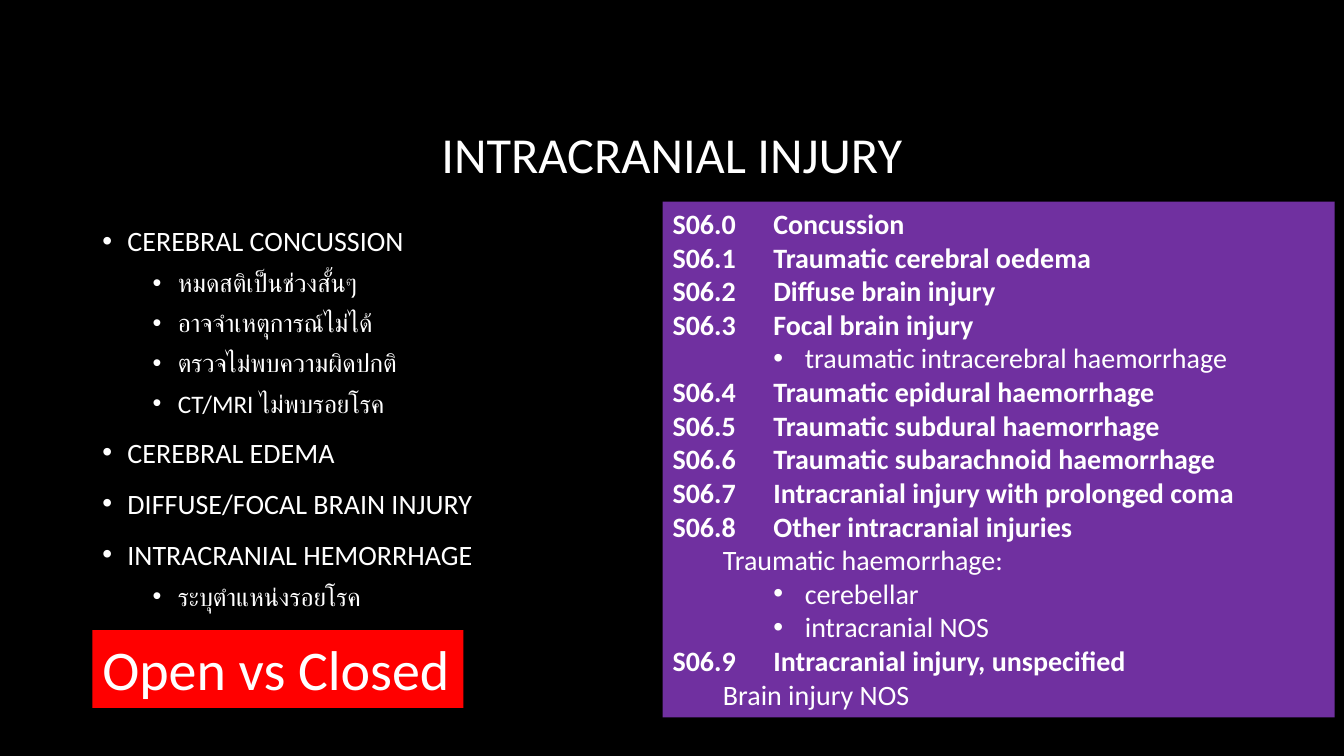
"""Builds the intracranial injury slide."""
import pptx
import pptx.dml.color
import pptx.enum.shapes
import pptx.enum.text
import pptx.oxml.ns
import pptx.util
import lxml.etree

Pt = pptx.util.Pt
Align = pptx.enum.text.PP_ALIGN
Anchor = pptx.enum.text.MSO_ANCHOR
Fit = pptx.enum.text.MSO_AUTO_SIZE


def color(code):
    return pptx.dml.color.RGBColor.from_string(code)


class Deck:
    font = "Calibri"
    ink = "FFFFFF"

    def __init__(self):
        self.show = pptx.Presentation()
        self.show.slide_width = Pt(960)
        self.show.slide_height = Pt(540)
        self.slide = self.show.slides.add_slide(self.show.slide_layouts[6])

    def back(self, code):
        fill = self.slide.background.fill
        fill.solid()
        fill.fore_color.rgb = color(code)

    def text(self, left, top, width, height):
        box = self.slide.shapes.add_textbox(Pt(left), Pt(top), Pt(width), Pt(height))
        frame = box.text_frame
        frame.word_wrap = True
        frame.vertical_anchor = Anchor.MIDDLE
        return frame

    def panel(self, left, top, width, height, code, wrap=True):
        box = self.slide.shapes.add_shape(
            pptx.enum.shapes.MSO_SHAPE.RECTANGLE,
            Pt(left), Pt(top), Pt(width), Pt(height))
        box.shadow.inherit = False
        box.fill.solid()
        box.fill.fore_color.rgb = color(code)
        box.line.fill.background()
        frame = box.text_frame
        frame.word_wrap = wrap
        frame.auto_size = Fit.SHAPE_TO_FIT_TEXT
        frame.vertical_anchor = Anchor.TOP
        return frame

    def bullet(self, para, left, hang):
        props = para._p.get_or_add_pPr()
        props.set("marL", str(Pt(left)))
        props.set("indent", str(-Pt(hang)))
        tag = pptx.oxml.ns.qn
        face = lxml.etree.SubElement(props, tag("a:buFont"))
        face.set("typeface", "Arial")
        mark = lxml.etree.SubElement(props, tag("a:buChar"))
        mark.set("char", "•")

    def line(self, frame, index, words, size, bold=False, align=Align.LEFT):
        para = frame.paragraphs[0] if index == 0 else frame.add_paragraph()
        para.text = words
        para.alignment = align
        for run in para.runs:
            run.font.name = self.font
            run.font.size = Pt(size)
            run.font.bold = bold
            run.font.color.rgb = color(self.ink)
        return para

    def title(self, frame, words):
        para = self.line(frame, 0, words, 36, align=Align.CENTER)
        para.line_spacing = 0.9

    def topics(self, frame, items):
        frame.margin_top, frame.margin_bottom = Pt(10), Pt(0)
        for index, (level, words) in enumerate(items):
            para = self.line(frame, index, words, 18 if level else 20)
            para.level = level
            para.line_spacing = 1.1
            para.space_before = Pt(0 if index == 0 else 5 if level else 10)
            self.bullet(para, 18 + 36 * level, 18)

    def codes(self, frame, items):
        for index, (kind, words) in enumerate(items):
            para = self.line(frame, index, words, 20, bold=kind == "code")
            if kind == "item":
                para.level = 2
                self.bullet(para, 94.5, 22.5)


TOPICS = [
    (0, "CEREBRAL CONCUSSION"),
    (1, "หมดสติเป็นช่วงสั้นๆ"),
    (1, "อาจจำเหตุการณ์ไม่ได้"),
    (1, "ตรวจไม่พบความผิดปกติ"),
    (1, "CT/MRI ไม่พบรอยโรค"),
    (0, "CEREBRAL EDEMA"),
    (0, "DIFFUSE/FOCAL BRAIN INJURY"),
    (0, "INTRACRANIAL HEMORRHAGE"),
    (1, "ระบุตำแหน่งรอยโรค"),
]
CODES = [
    ("code", "S06.0\tConcussion"),
    ("code", "S06.1\tTraumatic cerebral oedema"),
    ("code", "S06.2\tDiffuse brain injury"),
    ("code", "S06.3\tFocal brain injury"),
    ("item", "traumatic intracerebral haemorrhage"),
    ("code", "S06.4\tTraumatic epidural haemorrhage"),
    ("code", "S06.5\tTraumatic subdural haemorrhage"),
    ("code", "S06.6\tTraumatic subarachnoid haemorrhage"),
    ("code", "S06.7\tIntracranial injury with prolonged coma"),
    ("code", "S06.8\tOther intracranial injuries"),
    ("note", "\tTraumatic haemorrhage:"),
    ("item", "cerebellar"),
    ("item", "intracranial NOS"),
    ("code", "S06.9\tIntracranial injury, unspecified"),
    ("note", "\tBrain injury NOS"),
]


def main():
    deck = Deck()
    deck.back("000000")
    deck.title(deck.text(72, 49, 816, 126), "INTRACRANIAL INJURY")
    deck.topics(deck.text(66, 144, 330, 296), TOPICS)
    deck.codes(deck.panel(473.3, 144, 480, 368.4, "7030A0"), CODES)
    banner = deck.panel(66, 450, 265, 55.7, "FF0000", wrap=False)
    deck.line(banner, 0, "Open vs Closed", 40)
    deck.show.save("out.pptx")


if __name__ == "__main__":
    main()
